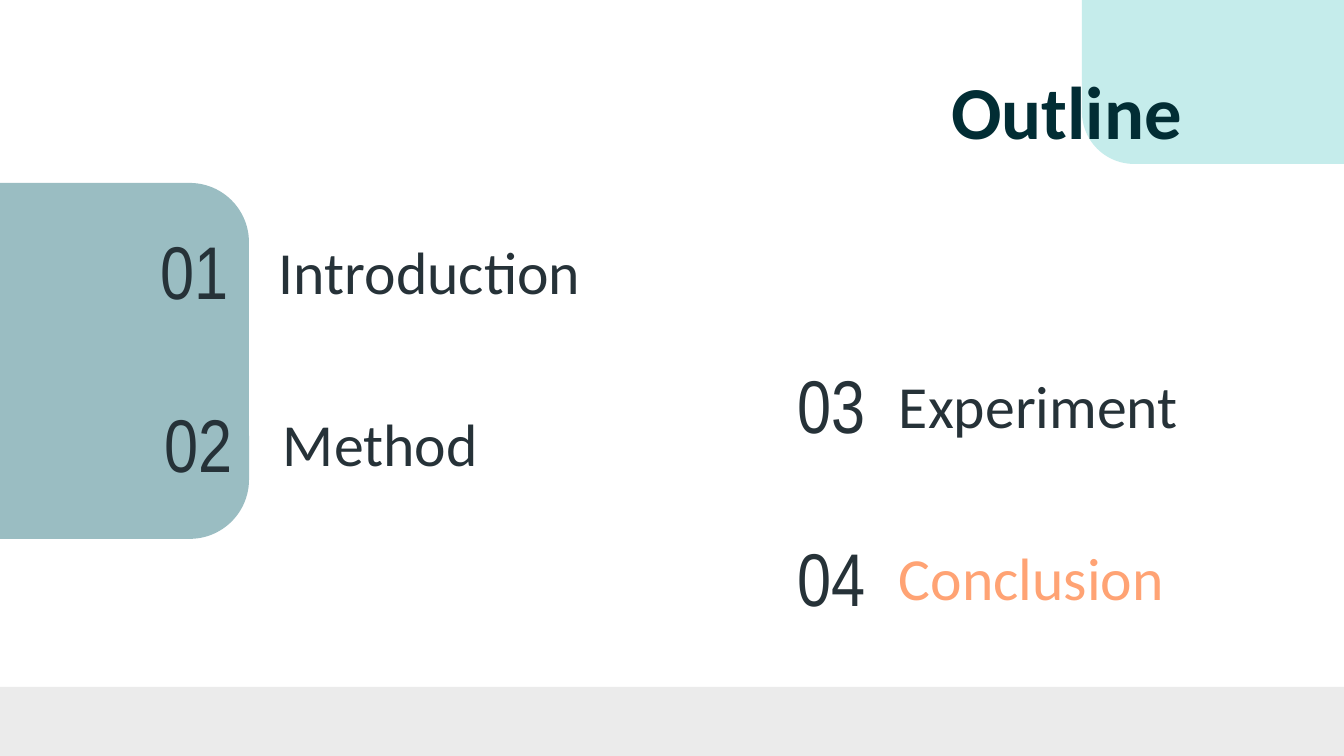
from lxml.etree import SubElement
from pptx import Presentation
from pptx.dml.color import RGBColor
from pptx.enum.shapes import MSO_SHAPE as Shape
from pptx.enum.text import MSO_ANCHOR as Anchor, MSO_AUTO_SIZE as AutoSize, PP_ALIGN as Align
from pptx.oxml.ns import qn
from pptx.util import Emu, Pt

EMU_PER_PIXEL = 914400 / 134.4
WIDTH, HEIGHT = 1344, 756
INSET = 13

GREY = RGBColor(0xEB, 0xEB, 0xEB)
TURQUOISE = RGBColor(0x19, 0xB5, 0xB1)
TEAL = RGBColor(0x04, 0x5A, 0x68)
NAVY = RGBColor(0x02, 0x2D, 0x34)
INK = RGBColor(0x26, 0x32, 0x38)
ORANGE = RGBColor(0xFF, 0xA3, 0x74)

NUMBER_SIZE = (261, 145)
LABEL_SIZE = (461, 117)
LABEL_DROP = 19

# Number, label, number left, label left, top, label colour
SECTIONS = [
    ("01", "Introduction", -19, 266, 183, INK),
    ("02", "Method", -15, 270, 356, INK),
    ("03", "Experiment", 618, 886, 317, INK),
    ("04", "Conclusion", 618, 886, 490, ORANGE),
]


def px(value):
    return Emu(round(value * EMU_PER_PIXEL))


def add_panel(slide, kind, left, top, width, height, color, opacity=100):
    shape = slide.shapes.add_shape(kind, px(left), px(top), px(width), px(height))
    shape.shadow.inherit = False
    shape.fill.solid()
    shape.fill.fore_color.rgb = color
    shape.line.fill.background()
    if opacity < 100:
        color_element = shape.fill._xPr.find(f".//{qn('a:srgbClr')}")
        SubElement(color_element, qn("a:alpha"), val=str(opacity * 1000))


def write_text(shape, text, font_name, size, color, align, anchor, bold=False):
    frame = shape.text_frame
    frame.text = text
    frame.word_wrap = True
    frame.auto_size = AutoSize.NONE
    frame.vertical_anchor = anchor
    frame.margin_left = frame.margin_right = px(INSET)
    frame.margin_top = frame.margin_bottom = px(INSET)
    paragraph = frame.paragraphs[0]
    paragraph.alignment = align
    font = paragraph.font
    font.name, font.size, font.bold = font_name, Pt(size), bold
    font.color.rgb = color


def add_title(slide, text):
    title = slide.shapes.title
    title.left, title.top = px(500), px(86)
    title.width, title.height = px(1133), px(47)
    write_text(title, text, "Calibri", 40, NAVY, Align.CENTER, Anchor.MIDDLE, bold=True)


def add_text(slide, text, left, top, size, font_name, font_size, color, align):
    width, height = size
    box = slide.shapes.add_textbox(px(left), px(top), px(width), px(height))
    write_text(box, text, font_name, font_size, color, align, Anchor.BOTTOM)


def add_section(slide, number, label, number_left, label_left, top, color):
    add_text(slide, number, number_left, top, NUMBER_SIZE,
             "Arial Narrow", 40, INK, Align.RIGHT)
    add_text(slide, label, label_left, top + LABEL_DROP, LABEL_SIZE,
             "Calibri", 32, color, Align.LEFT)


def main():
    presentation = Presentation()
    presentation.slide_width, presentation.slide_height = px(WIDTH), px(HEIGHT)
    slide = presentation.slides.add_slide(presentation.slide_layouts[5])

    # Footer band and corner panels
    add_panel(slide, Shape.RECTANGLE, 0, 687, WIDTH, HEIGHT - 687, GREY)
    add_panel(slide, Shape.ROUNDED_RECTANGLE, 1082, -148, 360, 312, TURQUOISE, 25)
    add_panel(slide, Shape.ROUNDED_RECTANGLE, -466, 183, 715, 356, TEAL, 40)

    # Bring the title in front of the panels
    slide.shapes._spTree.append(slide.shapes.title._element)
    add_title(slide, "Outline")

    # Numbered sections
    for section in SECTIONS:
        add_section(slide, *section)

    presentation.save("out.pptx")


if __name__ == "__main__":
    main()
